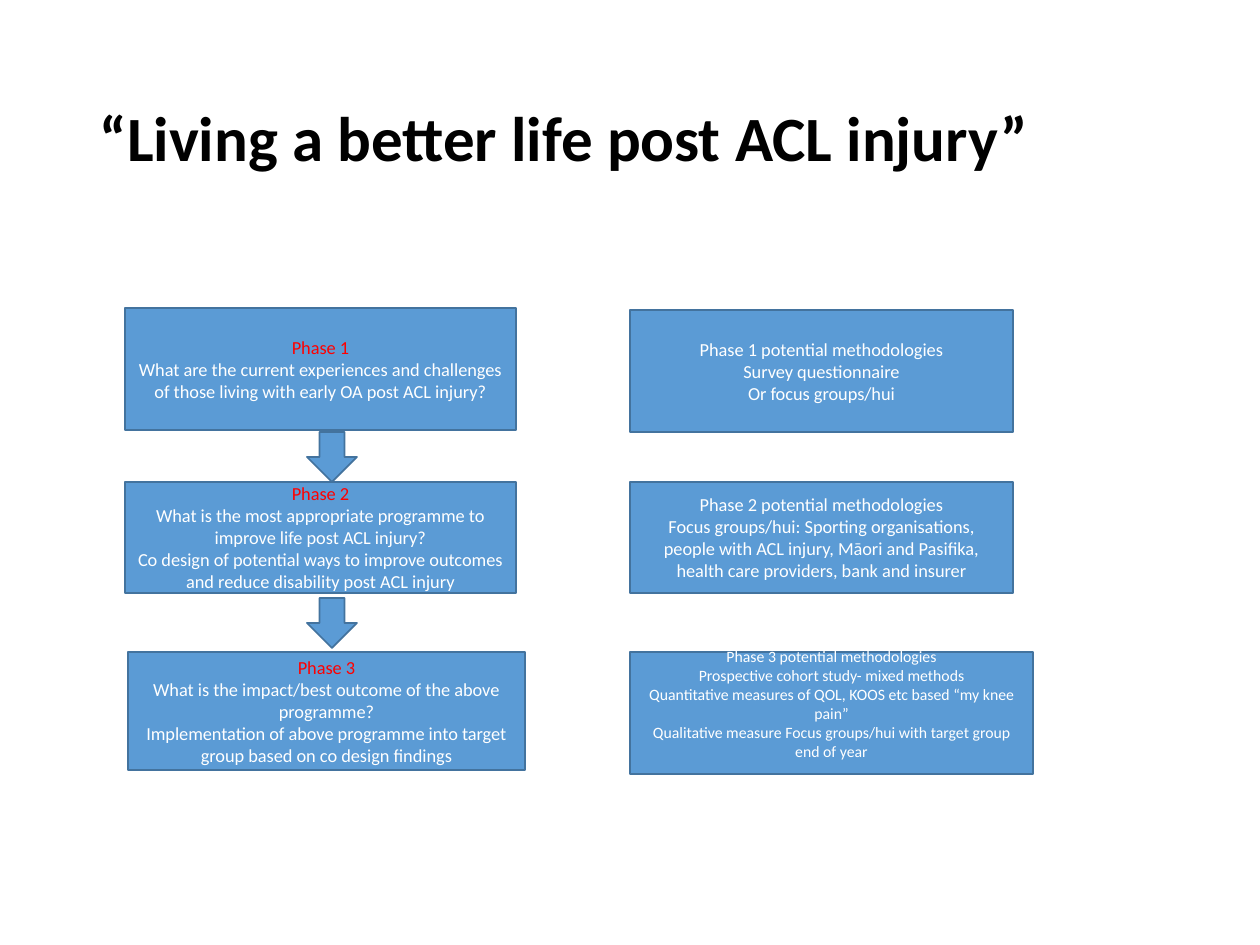
from pptx import Presentation
from pptx import util as u
from pptx.dml.color import RGBColor
from pptx.enum import shapes, text

PX = u.Inches(1) / 126
FONT = "Calibri"
COLORS = {"ink": "000000", "fill": "5B9BD5", "edge": "43739E",
          "head": "FF0000", "text": "FFFFFF"}

# Each phase: box, then its paragraphs; the first one is the heading.
PHASES = [
    ((125, 308, 391, 122), [
        "Phase 1",
        "What are the current experiences and challenges of those living "
        "with early OA post ACL injury?"]),
    ((125, 482, 391, 111), [
        "Phase 2",
        "What is the most appropriate programme to improve life post ACL injury?",
        "Co design of potential ways to improve outcomes and reduce "
        "disability post ACL injury"]),
    ((128, 652, 397, 118), [
        "Phase 3",
        "What is the impact/best outcome of the above programme?",
        "Implementation of above programme into target group based on "
        "co design findings"]),
]

# Each method: box, text size, bottom inset, paragraphs.
METHODS = [
    ((630, 310, 383, 122), 10.5, 6, [
        "Phase 1 potential methodologies",
        "Survey questionnaire",
        "Or focus groups/hui"]),
    ((630, 482, 383, 111), 10.5, 6, [
        "Phase 2 potential methodologies",
        "Focus groups/hui: Sporting organisations, people with ACL injury, "
        "Māori and Pasifika, health care providers, bank and insurer"]),
    ((630, 652, 403, 122), 9, 25, [
        "Phase 3 potential methodologies",
        "Prospective cohort study- mixed methods",
        "Quantitative measures of QOL, KOOS etc based “my knee pain”",
        "Qualitative measure Focus groups/hui with target group end of year"]),
]

ARROWS = [(307, 432, 50, 50), (307, 598, 50, 50)]


def px(n):
    return u.Emu(round(n * PX))


def rgb(name):
    return RGBColor.from_string(COLORS[name])


def add_run(para, words, size, color, bold=False):
    run = para.add_run()
    run.text = words
    font = run.font
    font.name, font.size, font.bold = FONT, u.Pt(size), bold
    font.color.rgb = rgb(color)


def add_block(slide, kind, box):
    """Add a filled and outlined preset shape."""
    block = slide.shapes.add_shape(kind, *map(px, box))
    block.shadow.inherit = False
    block.fill.solid()
    block.fill.fore_color.rgb = rgb("fill")
    block.line.color.rgb = rgb("edge")
    block.line.width = u.Pt(1)
    return block


def add_card(slide, box, lines, size=10.5, head="text", foot=6):
    block = add_block(slide, shapes.MSO_SHAPE.RECTANGLE, box)
    frame = block.text_frame
    frame.word_wrap = True
    frame.vertical_anchor = text.MSO_ANCHOR.MIDDLE
    frame.margin_top, frame.margin_bottom = px(6), px(foot)
    for i, line in enumerate(lines):
        para = frame.paragraphs[0] if i == 0 else frame.add_paragraph()
        para.alignment = text.PP_ALIGN.CENTER
        add_run(para, line, size, "text" if i else head)


def add_title(slide, box, words):
    title = slide.shapes.title
    title.left, title.top, title.width, title.height = map(px, box)
    frame = title.text_frame
    frame.word_wrap = True
    frame.auto_size = text.MSO_AUTO_SIZE.NONE
    frame.vertical_anchor = text.MSO_ANCHOR.MIDDLE
    para = frame.paragraphs[0]
    para.alignment = text.PP_ALIGN.LEFT
    para.line_spacing = 0.9
    add_run(para, words, 36, "ink", bold=True)


def add_phases(slide):
    for box, lines in PHASES:
        add_card(slide, box, lines, head="head")
    for box in ARROWS:
        add_block(slide, shapes.MSO_SHAPE.DOWN_ARROW, box)


def add_methods(slide):
    for box, size, foot, lines in METHODS:
        add_card(slide, box, lines, size, foot=foot)


def main():
    deck = Presentation()
    deck.slide_width, deck.slide_height = px(1260), px(945)
    slide = deck.slides.add_slide(deck.slide_layouts[5])
    add_title(slide, (87, 50, 1086, 183),
              "“Living a better life post ACL injury”")
    add_methods(slide)
    add_phases(slide)
    deck.save("out.pptx")


if __name__ == "__main__":
    main()
